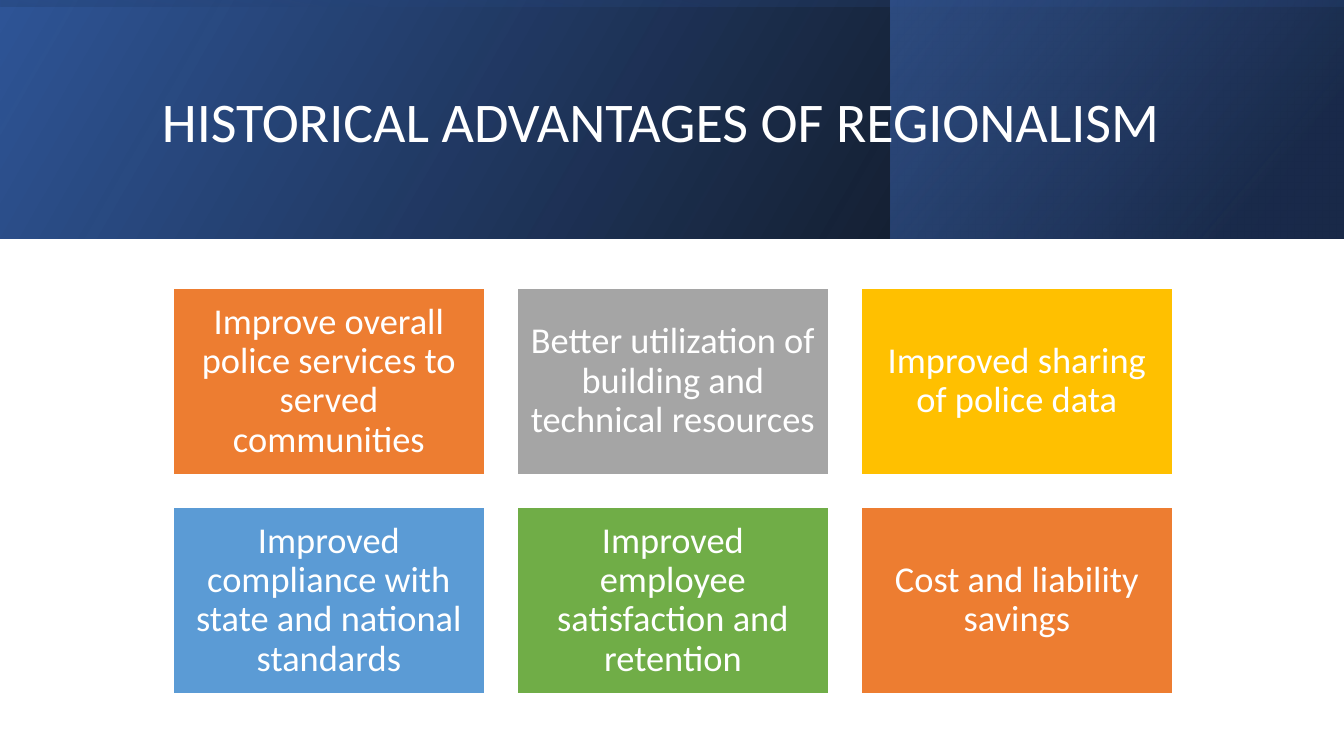
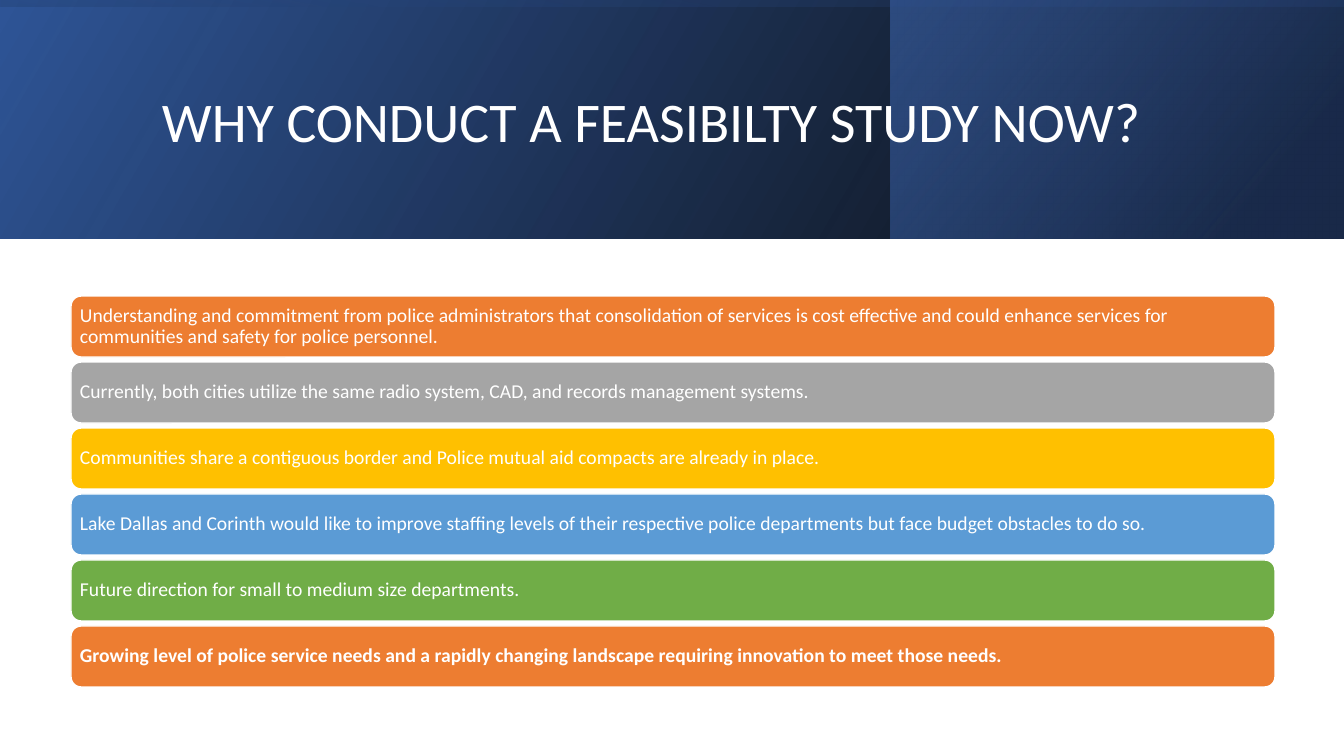
from dataclasses import dataclass

from lxml.etree import SubElement
from pptx import Presentation
from pptx.dml.color import RGBColor
from pptx.enum.shapes import MSO_SHAPE as SHAPE
from pptx.enum.text import MSO_ANCHOR as ANCHOR, PP_ALIGN as ALIGN
from pptx.oxml.ns import qn
from pptx.util import Pt

ADVANTAGES_TITLE = "HISTORICAL ADVANTAGES OF REGIONALISM"
ADVANTAGES = [
    "Improve overall police services to served communities",
    "Better utilization of building and technical resources",
    "Improved sharing of police data",
    "Improved compliance with state and national standards",
    "Improved employee satisfaction and retention",
    "Cost and liability savings",
]
REASONS_TITLE = "WHY CONDUCT A FEASIBILTY STUDY NOW?"
REASONS = [
    "Understanding and commitment from police administrators that consolidation of services "
    "is cost effective and could enhance services for communities and safety for police personnel.",
    "Currently, both cities utilize the same radio system, CAD, and records management systems.",
    "Communities share a contiguous border and Police mutual aid compacts are already in place.",
    "Lake Dallas and Corinth would like to improve staffing levels of their respective "
    "police departments but face budget obstacles to do so.",
    "Future direction for small to medium size departments.",
    "Growing level of police service needs and a rapidly changing landscape requiring "
    "innovation to meet those needs.",
]


@dataclass(frozen=True)
class Theme:
    font: str = "Calibri"
    text: str = "FFFFFF"
    accents: tuple = ("ED7D31", "A5A5A5", "FFC000", "5B9BD5", "70AD47")
    title_pt: int = 40
    card_pt: int = 26
    bar_pt: int = 14


THEME = Theme()
SLIDE_W, SLIDE_H, BAND_H = 1344, 756, 239
EMU_PER_PX = 12192000 / SLIDE_W
TITLE_BOX = (152, 38, 1072, 173)

# box, rotation, counterclockwise angle, stops of (position %, colour, opacity %)
BAND_LAYERS = [
    ((0, 0, SLIDE_W, BAND_H), 0, 30, [(0, "000000", 96), (100, "2F5597", 100)]),
    ((891, 0, 452, BAND_H), 0, 40, [(19, "203864", 68), (100, "4472C4", 48)]),
    (((SLIDE_W - BAND_H) / 2, (BAND_H - SLIDE_W) / 2, BAND_H, SLIDE_W), 270, 10,
     [(23, "2F5597", 16), (99, "000000", 45)]),
]


def emu(lengths):
    return [round(v * EMU_PER_PX) for v in lengths]


def rgb(colour):
    return RGBColor.from_string(colour)


def write(s, text, pt, align=ALIGN.LEFT, inset=10, bold=False):
    tf = s.text_frame
    margin = round(inset * EMU_PER_PX)
    frame = dict(word_wrap=True, vertical_anchor=ANCHOR.MIDDLE, margin_left=margin,
                 margin_right=margin, margin_top=margin, margin_bottom=margin)
    for name, value in frame.items():
        setattr(tf, name, value)
    p = tf.paragraphs[0]
    p.alignment, p.line_spacing = align, 0.9
    r = p.add_run()
    r.text = text
    for name, value in dict(name=THEME.font, size=Pt(pt), bold=bold).items():
        setattr(r.font, name, value)
    r.font.color.rgb = rgb(THEME.text)


def add_band_layer(slide, box, rotation, angle, stops):
    s = slide.shapes.add_shape(SHAPE.RECTANGLE, *emu(box))
    s.shadow.inherit = False
    s.line.fill.background()
    s.rotation = rotation
    s.fill.gradient()
    s.fill.gradient_angle = angle
    for stop, (position, colour, _) in zip(s.fill.gradient_stops, stops):
        stop.position = position / 100
        stop.color.rgb = rgb(colour)
    sp_pr = s._element.spPr
    sp_pr.find(qn("a:xfrm")).set("flipH", "1")
    for clr, (_, _, opacity) in zip(sp_pr.iter(qn("a:srgbClr")), stops):
        SubElement(clr, qn("a:alpha")).set("val", str(opacity * 1000))


def add_titled_slide(prs, title):
    slide = prs.slides.add_slide(prs.slide_layouts[6])
    for layer in BAND_LAYERS:
        add_band_layer(slide, *layer)
    write(slide.shapes.add_textbox(*emu(TITLE_BOX)), title, THEME.title_pt)
    return slide


def add_tiles(slide, items, shape, origin, size, gap, columns, bold_last=False, **style):
    """Lay the items out row by row, cycling through the accent colours."""
    (x, y), (w, h) = origin, size
    for i, text in enumerate(items):
        row, col = divmod(i, columns)
        s = slide.shapes.add_shape(
            shape, *emu((x + col * (w + gap), y + row * (h + gap), w, h)))
        s.shadow.inherit = False
        s.fill.solid()
        s.fill.fore_color.rgb = rgb(THEME.accents[i % len(THEME.accents)])
        s.line.color.rgb = rgb(THEME.text)
        s.line.width = Pt(1)
        write(s, text, bold=bold_last and i == len(items) - 1, **style)


def main():
    prs = Presentation()
    prs.slide_width, prs.slide_height = emu((SLIDE_W, SLIDE_H))
    add_tiles(add_titled_slide(prs, ADVANTAGES_TITLE), ADVANTAGES, SHAPE.RECTANGLE,
              origin=(173, 288), size=(312, 187), gap=32, columns=3,
              pt=THEME.card_pt, align=ALIGN.CENTER, inset=11)
    add_tiles(add_titled_slide(prs, REASONS_TITLE), REASONS, SHAPE.ROUNDED_RECTANGLE,
              origin=(71, 296), size=(1204, 61), gap=5, columns=1, bold_last=True,
              pt=THEME.bar_pt, inset=6)
    prs.save("out.pptx")


if __name__ == "__main__":
    main()
